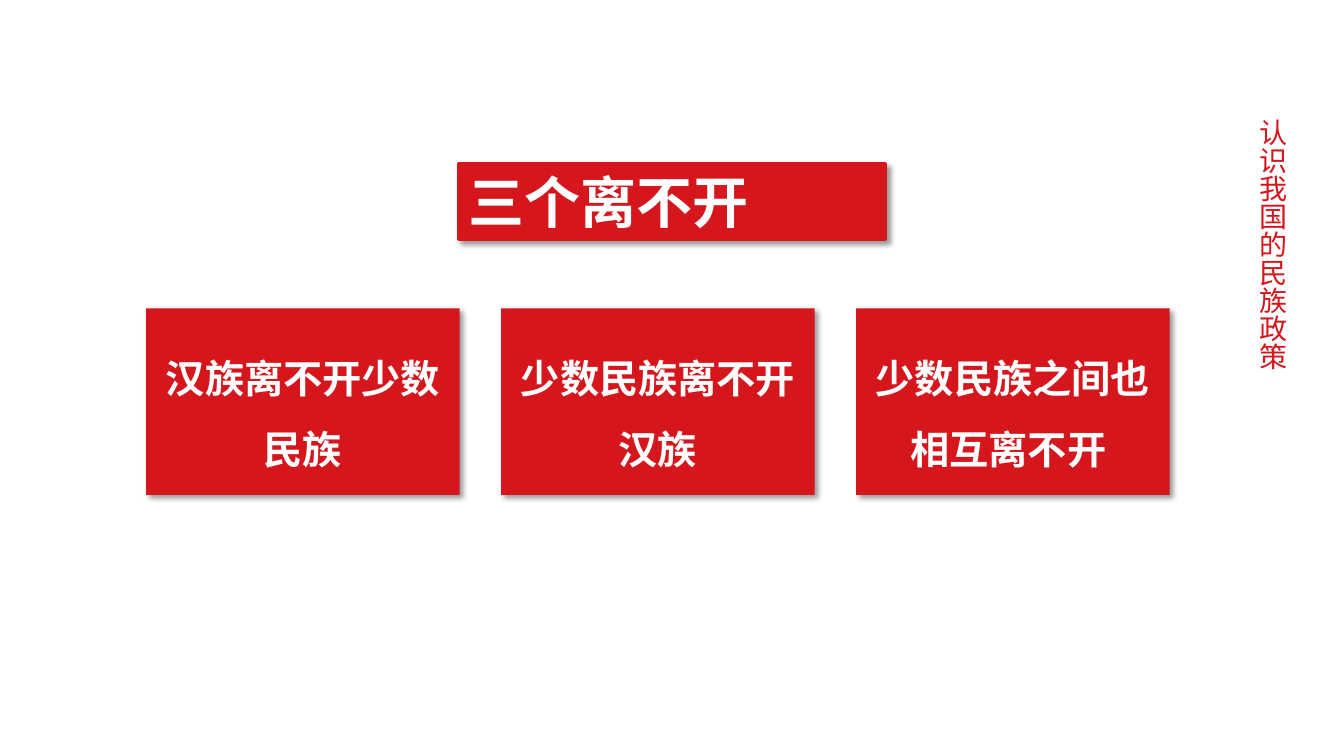
import pptx
import pptx.util
import pptx.dml.color
import pptx.enum.shapes
import pptx.enum.text
import pptx.oxml
import pptx.oxml.ns
from dataclasses import dataclass

Inches = pptx.util.Inches
Align = pptx.enum.text.PP_ALIGN


@dataclass(frozen=True)
class Theme:
    red: str = "D5161D"
    white: str = "FFFFFF"
    font: str = "Noto Sans CJK SC"
    title: int = 40
    body: int = 28
    side: int = 20


SHADOW = (
    '<a:outerShdw xmlns:a="http://schemas.openxmlformats.org/drawingml/2006/main"'
    ' blurRad="50800" dist="38100" dir="2700000" algn="tl" rotWithShape="0">'
    '<a:srgbClr val="000000"><a:alpha val="40000"/></a:srgbClr></a:outerShdw>'
)


def paint(code):
    return pptx.dml.color.RGBColor.from_string(code)


def write(shape, text, font, size, color, bold=False, align=Align.CENTER, space=1.0):
    frame = shape.text_frame
    frame.word_wrap = True
    frame.vertical_anchor = pptx.enum.text.MSO_ANCHOR.MIDDLE
    para = frame.paragraphs[0]
    para.alignment = align
    para.line_spacing = space
    run = para.add_run()
    run.text = text
    run.font.size = pptx.util.Pt(size)
    run.font.bold = bold
    run.font.color.rgb = paint(color)
    run.font.name = font
    # East Asian glyphs take their font from a:ea
    east = pptx.oxml.parse_xml(
        f'<a:ea {pptx.oxml.ns.nsdecls("a")} typeface="{font}"/>')
    run.font._element.find(pptx.oxml.ns.qn("a:latin")).addnext(east)


class Deck:
    """Holds the theme and the current slide."""

    def __init__(self, theme, slide):
        self.theme = theme
        self.slide = slide

    def card(self, text, left, top, width, height, size, edge=0, **style):
        """Add a red box with a soft shadow and bold white text."""
        theme = self.theme
        box = self.slide.shapes.add_shape(
            pptx.enum.shapes.MSO_SHAPE.RECTANGLE,
            Inches(left), Inches(top), Inches(width), Inches(height))
        box.fill.solid()
        box.fill.fore_color.rgb = paint(theme.red)
        if edge:
            box.line.color.rgb = paint(theme.red)
            box.line.width = pptx.util.Pt(edge)
        else:
            box.line.fill.background()
        box.shadow.inherit = False
        effects = box._element.spPr.find(pptx.oxml.ns.qn("a:effectLst"))
        effects.append(pptx.oxml.parse_xml(SHADOW))
        write(box, text, theme.font, size, theme.white, bold=True, **style)

    def side(self, text, left, top, width, height):
        """Add a label whose text runs from top to bottom."""
        theme = self.theme
        box = self.slide.shapes.add_textbox(
            Inches(left), Inches(top), Inches(width), Inches(height))
        write(box, text, theme.font, theme.side, theme.red,
              align=Align.JUSTIFY, space=1.5)
        box.text_frame._txBody.bodyPr.set("vert", "eaVert")


def main():
    show = pptx.Presentation()
    show.slide_width = Inches(13.33)
    show.slide_height = Inches(7.5)
    theme = Theme()
    deck = Deck(theme, show.slides.add_slide(show.slide_layouts[6]))

    deck.card("三个离不开", 4.55, 1.62, 4.23, 0.76, theme.title,
              edge=2.25, align=Align.JUSTIFY)
    points = ["汉族离不开少数民族", "少数民族离不开汉族", "少数民族之间也相互离不开 "]
    for index, point in enumerate(points):
        deck.card(point, 1.45 + 3.52 * index, 3.06, 3.11, 1.85, theme.body, space=1.5)
    deck.side("认识我国的民族政策", 12.42, 1.08, 0.57, 4.26)

    show.save("out.pptx")


if __name__ == "__main__":
    main()
